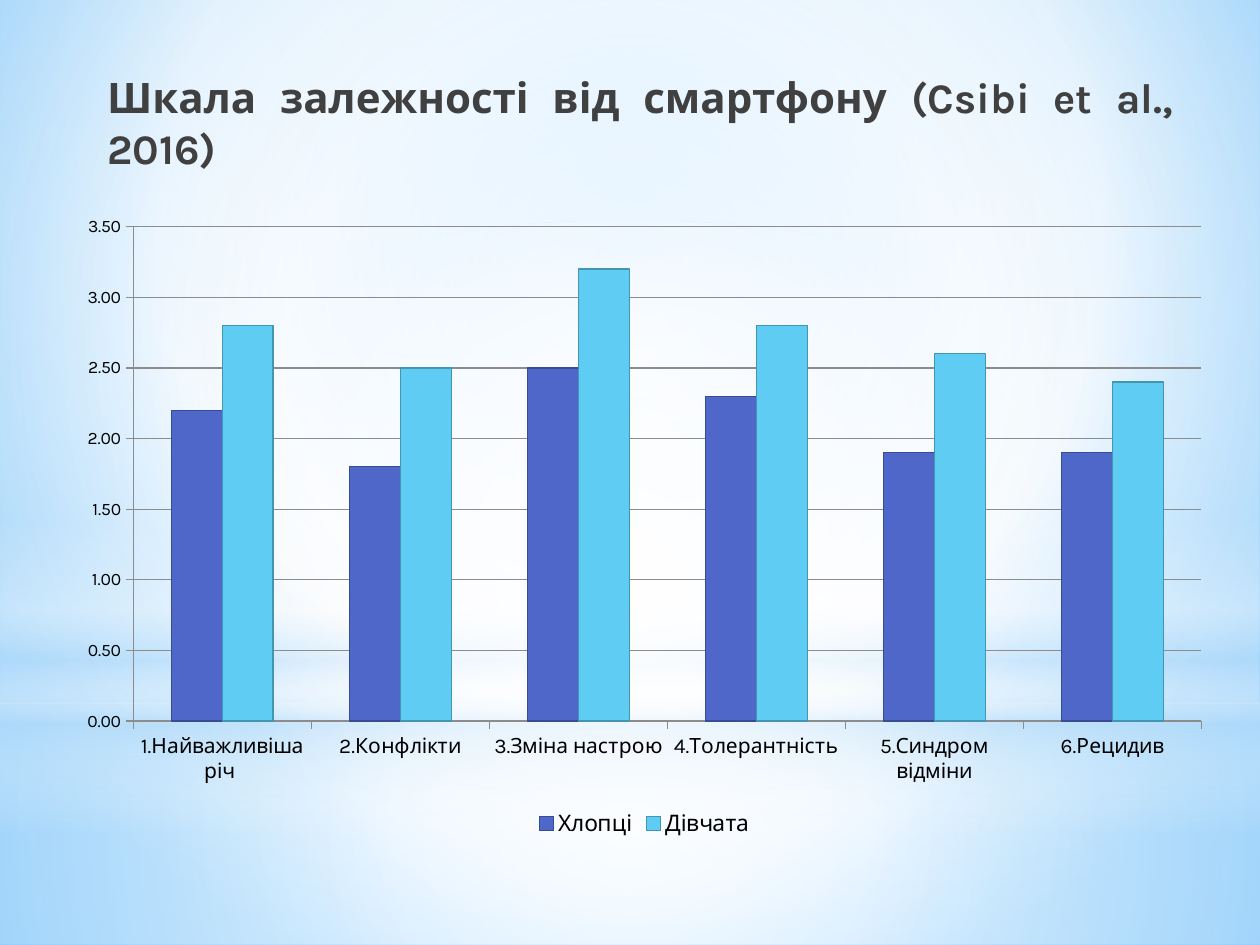
from lxml import etree
from pptx import Presentation
from pptx import util as u
from pptx.chart.data import CategoryChartData
from pptx.dml.color import RGBColor
from pptx.enum import chart as c, shapes, text
from pptx.oxml.ns import qn

# Content
TITLE = "Шкала залежності від смартфону (Csibi et al., 2016)"
CATEGORIES = ["1.Найважливіша річ ", "2.Конфлікти", "3.Зміна настрою",
              "4.Толерантність", "5.Синдром відміни", "6.Рецидив"]
SERIES = {
    "Хлопці": [2.2, 1.8, 2.5, 2.3, 1.9, 1.9],
    "Дівчата": [2.8, 2.5, 3.2, 2.8, 2.6, 2.4],
}
FONT = "Karla"
COLORS = {
    "white": "FFFFFF", "haze": "B4DCFA", "sky": "9ED5FF", "deep": "5BB9FF",
    "title": "404040", "text": "000000", "grid": "8C8C8C",
    "Хлопці": "4E67C8", "Дівчата": "5ECCF3",
    "Хлопці edge": "394B92", "Дівчата edge": "4495B2",
}

# Gradients: stops of (position %, colour, opacity %); a focus of left, top,
# right, bottom gives a circular gradient, no focus a vertical one
CENTRE = (50, 50, 50, 50)
BACKGROUND = [(0, "sky", 100), (60, "white", 100), (100, "deep", 100)]
BACKGROUND_FOCUS = (20, 10, 20, 60)
RECTANGLE, OVAL = shapes.MSO_SHAPE.RECTANGLE, shapes.MSO_SHAPE.OVAL
GLOWS = [  # kind, top, height, stops, focus
    (RECTANGLE, 5.58, 1.92,
     [(0, "white", 91), (37, "white", 76), (100, "haze", 79)], CENTRE),
    (RECTANGLE, 0, 5.58,
     [(0, "white", 89), (48, "white", 62), (100, "haze", 79)], CENTRE),
    (RECTANGLE, 4.12, 2.5,
     [(0, "white", 0), (29, "white", 30), (45, "haze", 40),
      (55, "white", 26), (65, "haze", 60), (100, "white", 0)], None),
    (OVAL, 1.75, 5.58, [(0, "white", 100), (56, "white", 0)], CENTRE),
]


def color(name):
    return RGBColor.from_string(COLORS[name])


def apply(target, **values):
    for name, value in values.items():
        setattr(target, name, value)


def set_gradient(properties, stops, focus):
    """Replace the solid fill in properties with a gradient."""
    gradient = etree.Element(qn("a:gradFill"), rotWithShape="1")
    stop_list = etree.SubElement(gradient, qn("a:gsLst"))
    for position, name, opacity in stops:
        stop = etree.SubElement(stop_list, qn("a:gs"), pos=str(position * 1000))
        shade = etree.SubElement(stop, qn("a:srgbClr"), val=COLORS[name])
        if opacity < 100:
            etree.SubElement(shade, qn("a:alpha"), val=str(opacity * 1000))
    if focus:
        circle = etree.SubElement(gradient, qn("a:path"), path="circle")
        sides = {side: str(value * 1000) for side, value in zip("ltrb", focus)}
        etree.SubElement(circle, qn("a:fillToRect"), **sides)
    else:
        etree.SubElement(gradient, qn("a:lin"), ang="5400000", scaled="0")
    properties.replace(properties.find(qn("a:solidFill")), gradient)


def add_background(slide):
    slide.background.fill.solid()
    slide.background.fill.fore_color.rgb = color("white")
    set_gradient(slide.element.find(".//" + qn("p:bgPr")),
                 BACKGROUND, BACKGROUND_FOCUS)
    for kind, top, height, stops, focus in GLOWS:
        shape = slide.shapes.add_shape(
            kind, 0, u.Inches(top), u.Inches(10), u.Inches(height))
        shape.shadow.inherit = False
        shape.line.fill.background()
        shape.fill.solid()
        set_gradient(shape.element.spPr, stops, focus)


def add_title(slide):
    title = slide.shapes.title
    apply(title, left=u.Inches(0.75), top=u.Inches(0.52),
          width=u.Inches(8.66), height=u.Inches(0.63))
    apply(title.text_frame, text=TITLE, word_wrap=True,
          auto_size=text.MSO_AUTO_SIZE.NONE,
          vertical_anchor=text.MSO_ANCHOR.TOP)
    paragraph = title.text_frame.paragraphs[0]
    paragraph.alignment = text.PP_ALIGN.JUSTIFY
    font = paragraph.runs[0].font
    apply(font, name=FONT, size=u.Pt(24), bold=True)
    font.color.rgb = color("title")
    # Bring the title in front of the background glows
    slide.shapes.element.append(title.element)


def add_scores_chart(slide):
    data = CategoryChartData(number_format="0.00")
    data.categories = CATEGORIES
    for name, values in SERIES.items():
        data.add_series(name, values)
    chart = slide.shapes.add_chart(
        c.XL_CHART_TYPE.COLUMN_CLUSTERED, u.Inches(0.51), u.Inches(1.62),
        u.Inches(9.21), u.Inches(5.06), data).chart
    apply(chart, has_title=False, has_legend=True)
    apply(chart.font, name=FONT, size=u.Pt(10))
    chart.font.color.rgb = color("text")

    # Columns
    plot = chart.plots[0]
    apply(plot, gap_width=150, overlap=0, vary_by_categories=False)
    for series in plot.series:
        series.format.fill.solid()
        series.format.fill.fore_color.rgb = color(series.name)
        series.format.line.color.rgb = color(series.name + " edge")
        series.format.line.width = u.Pt(0.75)

    # Axes and legend
    value_axis, category_axis = chart.value_axis, chart.category_axis
    apply(value_axis, minimum_scale=0, maximum_scale=3.5, major_unit=0.5,
          has_major_gridlines=True)
    apply(value_axis.tick_labels, number_format="0.00",
          number_format_is_linked=False)
    for axis in (value_axis, category_axis):
        axis.major_tick_mark = c.XL_TICK_MARK.OUTSIDE
        axis.format.line.color.rgb = color("grid")
    value_axis.major_gridlines.format.line.color.rgb = color("grid")
    apply(chart.legend, position=c.XL_LEGEND_POSITION.BOTTOM,
          include_in_layout=False)
    for font, size in ((category_axis.tick_labels.font, 12),
                       (chart.legend.font, 13)):
        apply(font, name=FONT, size=u.Pt(size))
        font.color.rgb = color("text")


def main():
    presentation = Presentation()
    apply(presentation, slide_width=u.Inches(10), slide_height=u.Inches(7.5))
    slide = presentation.slides.add_slide(presentation.slide_layouts[5])
    add_background(slide)
    add_title(slide)
    add_scores_chart(slide)
    presentation.save("out.pptx")


if __name__ == "__main__":
    main()
